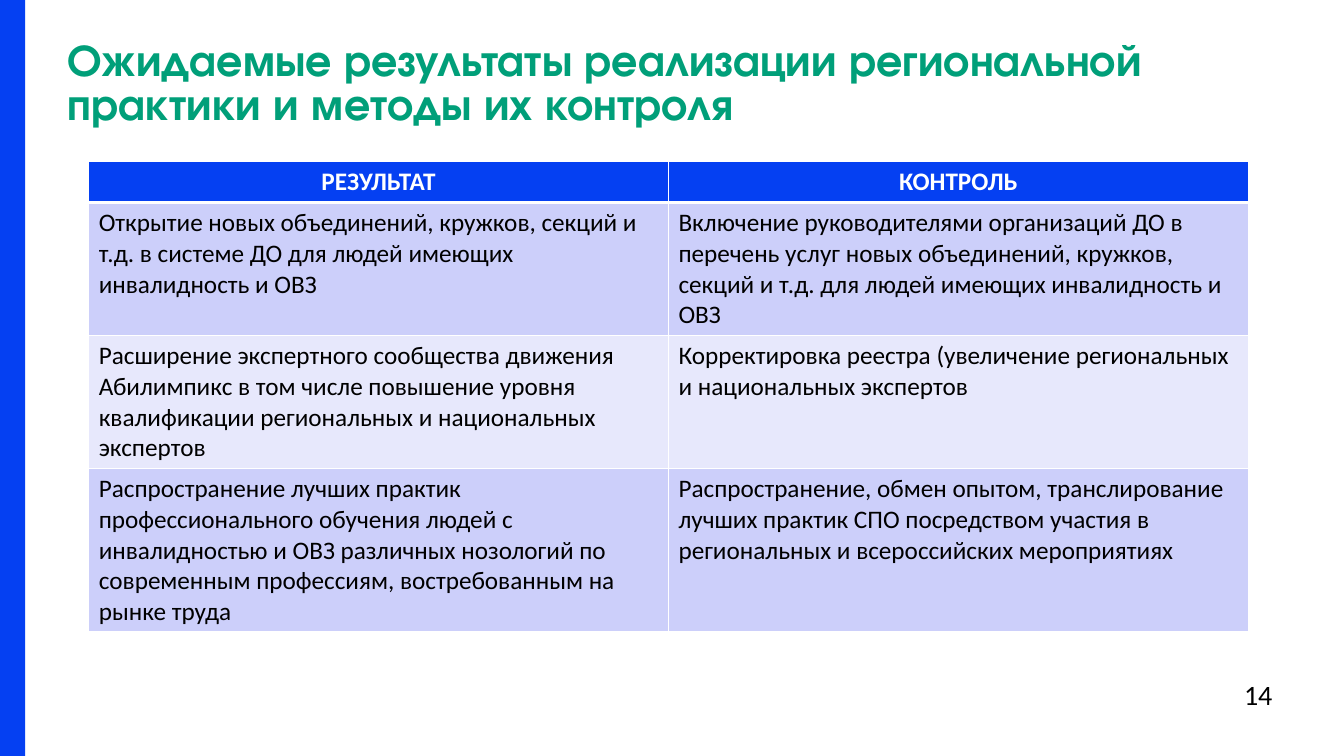
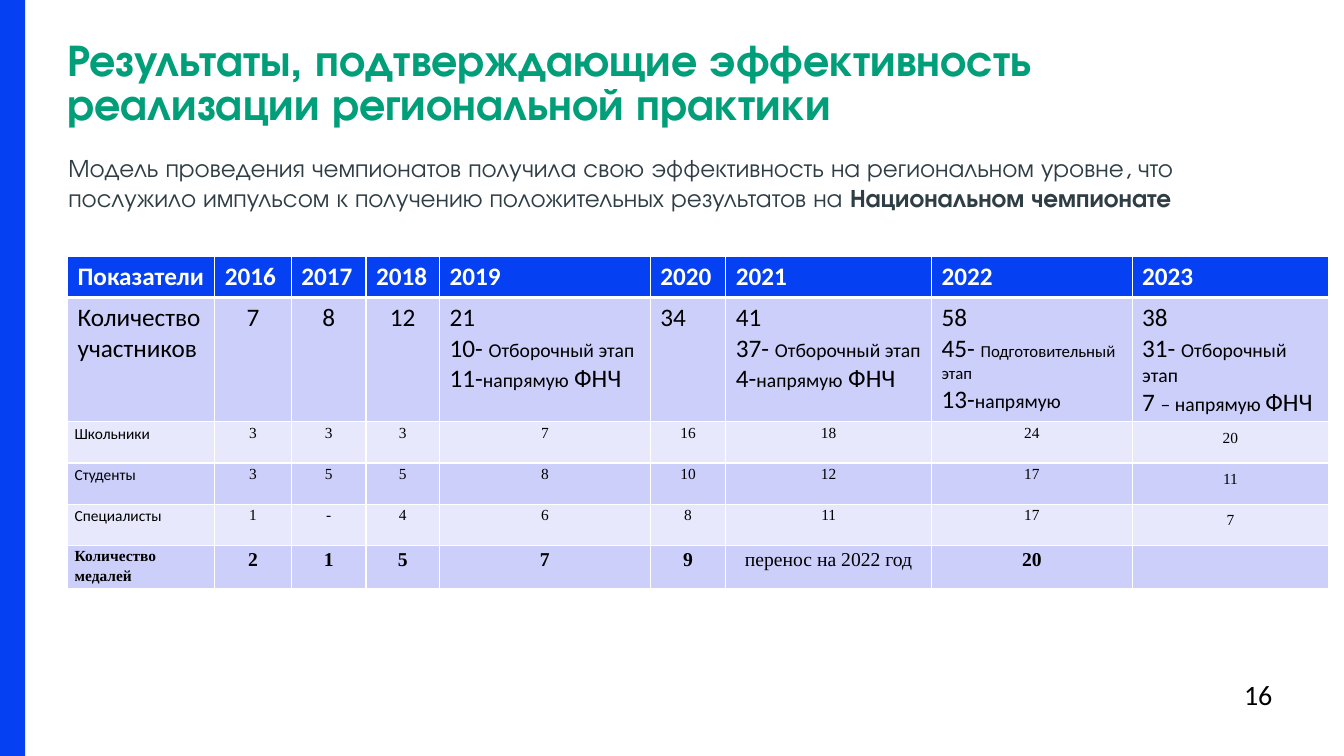
from lxml import etree
from pptx import Presentation
from pptx.dml.color import RGBColor
from pptx.enum.shapes import MSO_SHAPE
from pptx.enum.text import MSO_ANCHOR, MSO_AUTO_SIZE, PP_ALIGN
from pptx.oxml.ns import qn
from pptx.util import Inches, Pt

COLORS = {
    "blue": "0540F2",
    "green": "009F79",
    "slate": "2F3E45",
    "black": "000000",
    "white": "FFFFFF",
    "band": "CCCFFA",
    "light": "E7E8FC",
}
BODY, DISPLAY, SERIF = "Calibri", "TeX Gyre Adventor", "Times New Roman"
LEFT, CENTER = PP_ALIGN.LEFT, PP_ALIGN.CENTER
SLIDE_W, SLIDE_H = 13.33, 7.5
HEADER_H = 0.41


def rgb(name):
    return RGBColor.from_string(COLORS[name])


def write(tf, paragraphs, align=LEFT, spacing=None, **base):
    if isinstance(paragraphs, str):
        paragraphs = [paragraphs]
    for i, runs in enumerate(paragraphs):
        p = tf.paragraphs[0] if i == 0 else tf.add_paragraph()
        p.alignment = align
        if spacing:
            p.line_spacing = spacing
        for text, own in [(runs, {})] if isinstance(runs, str) else runs:
            fmt = {"size": 18, "font": BODY, "color": "black", "bold": False} | base | own
            r = p.add_run()
            r.text = text
            r.font.size = Pt(fmt["size"])
            r.font.name = fmt["font"]
            r.font.bold = fmt["bold"]
            r.font.color.rgb = rgb(fmt["color"])


def add_text(slide, box, paragraphs, wrap=True, **fmt):
    tf = slide.shapes.add_textbox(*map(Inches, box)).text_frame
    tf.word_wrap = wrap
    write(tf, paragraphs, **fmt)


def add_frame(prs, title, number):
    slide = prs.slides.add_slide(prs.slide_layouts[5])
    sp = slide.shapes.title
    sp.left, sp.top, sp.width, sp.height = map(Inches, (0.67, 0.4, 11.93, 0.98))
    tf = sp.text_frame
    tf.margin_left = tf.margin_top = tf.margin_right = tf.margin_bottom = 0
    tf.vertical_anchor = MSO_ANCHOR.TOP
    tf.auto_size = MSO_AUTO_SIZE.NONE
    tf.word_wrap = True
    write(tf, title, spacing=Pt(32), size=32, font=DISPLAY, color="green", bold=True)

    band = slide.shapes.add_shape(MSO_SHAPE.RECTANGLE, 0, 0, Inches(0.25), Inches(SLIDE_H))
    band.shadow.inherit = False
    band.fill.solid()
    band.fill.fore_color.rgb = rgb("blue")
    band.line.fill.background()
    add_text(slide, (12.24, 6.67, 0.53, 0.44), number, wrap=False, size=20)
    return slide


def paint_cell(cell, row):
    tc_pr = cell._tc.get_or_add_tcPr()
    widths = {"L": 1, "R": 1, "T": 3 if row == 1 else 1, "B": 3 if row == 0 else 1}
    for side, width in widths.items():
        ln = etree.SubElement(tc_pr, qn("a:ln" + side), w=str(Pt(width)))
        fill = etree.SubElement(ln, qn("a:solidFill"))
        etree.SubElement(fill, qn("a:srgbClr"), val=COLORS["white"])
    cell.fill.solid()
    cell.fill.fore_color.rgb = rgb("blue" if row == 0 else "band" if row % 2 else "light")


def add_grid(slide, left, top, cols, heights, headers, align):
    frame = slide.shapes.add_table(len(heights), len(cols), Inches(left), Inches(top),
                                   Inches(sum(cols)), Inches(sum(heights)))
    table = frame.table
    table.horz_banding = False
    for col, width in zip(table.columns, cols):
        col.width = Inches(width)
    for i, (row, height) in enumerate(zip(table.rows, heights)):
        row.height = Inches(height)
        for cell in row.cells:
            paint_cell(cell, i)
    for cell, text in zip(table.rows[0].cells, headers):
        write(cell.text_frame, text, align=align, color="white", bold=True)
    return table


def fill_compact(cell, text, **fmt):
    cell.margin_left = cell.margin_right = Inches(0.07)
    cell.margin_top = cell.margin_bottom = 0
    write(cell.text_frame, text, spacing=1.15, **fmt)


def build_expected(prs):
    slide = add_frame(
        prs, "Ожидаемые результаты реализации региональной практики и методы их контроля", "14")
    rows = [
        ("Открытие новых объединений, кружков, секций и т.д. в системе ДО для людей "
         "имеющих инвалидность и ОВЗ",
         "Включение руководителями организаций ДО в перечень услуг новых объединений, "
         "кружков, секций и т.д. для людей имеющих инвалидность и ОВЗ"),
        ("Расширение экспертного сообщества движения Абилимпикс в том числе повышение "
         "уровня квалификации региональных и национальных экспертов",
         "Корректировка реестра (увеличение региональных и национальных экспертов"),
        ("Распространение лучших практик профессионального обучения людей с инвалидностью "
         "и ОВЗ различных нозологий по современным профессиям, востребованным на рынке труда",
         "Распространение, обмен опытом, транслирование лучших практик СПО посредством "
         "участия в региональных и всероссийских мероприятиях"),
    ]
    table = add_grid(slide, 0.88, 1.6, [5.75, 5.75], [HEADER_H, 1.32, 1.32, 1.62],
                     ["РЕЗУЛЬТАТ", "КОНТРОЛЬ"], CENTER)
    for i, texts in enumerate(rows, 1):
        for cell, text in zip(table.rows[i].cells, texts):
            write(cell.text_frame, text)


def stage(count, label, size=14):
    return [(count, {}), (label, {"size": size})]


def build_evidence(prs):
    slide = add_frame(
        prs, "Результаты, подтверждающие эффективность реализации региональной практики", "16")
    intro = [
        ("Модель проведения чемпионатов получила свою эффективность на региональном уровне, "
         "что послужило импульсом к получению положительных результатов на ", {}),
        ("Национальном чемпионате", {"bold": True}),
    ]
    add_text(slide, (0.58, 1.46, 12.4, 0.71), [intro], font=DISPLAY, color="slate")

    cols = [1.46, 0.76, 0.74, 0.73, 2.09, 0.75, 2.04, 1.99, 1.95]
    headers = ["Показатели"] + [str(year) for year in range(2016, 2024)]
    table = add_grid(slide, 0.67, 2.54, cols, [HEADER_H, 1.23] + [HEADER_H] * 4,
                     headers, LEFT)

    final = ("ФНЧ", {})
    participants = [
        "Количество участников", "7", "8", "12",
        ["21", stage("10- ", "Отборочный этап"),
         stage("11-", "напрямую") + [(" ", {"size": 16}), final]],
        "34",
        ["41", stage("37- ", "Отборочный этап"), stage("4-", "напрямую") + [(" ФНЧ", {})]],
        ["58", stage("45- ", "Подготовительный этап", 12), stage("13-", "напрямую")],
        ["38", stage("31- ", "Отборочный этап"), stage("7 ", "– напрямую ") + [final]],
    ]
    for j, (cell, text) in enumerate(zip(table.rows[1].cells, participants)):
        write(cell.text_frame, text, align=CENTER if 1 <= j <= 3 else LEFT)

    groups = [
        ("Школьники", "3 3 3 7 16 18 24 20"),
        ("Студенты", "3 5 5 8 10 12 17 11"),
        ("Специалисты", "1 - 4 6 8 11 17 7"),
    ]
    for i, (label, counts) in enumerate(groups, 2):
        first, *middle, last = table.rows[i].cells
        *values, latest = counts.split()
        fill_compact(first, label, size=11)
        for cell, value in zip(middle, values):
            fill_compact(cell, value, align=CENTER, size=11, font=SERIF)
        write(last.text_frame, latest, align=CENTER, spacing=1.15, size=11, font=SERIF)

    first, *others = table.rows[5].cells
    fill_compact(first, "Количество медалей", size=11, font=SERIF, bold=True)
    medals = ["2", "1", "5", "7", "9", "перенос на 2022 год", "20"]
    for cell, value in zip(others, medals):
        fill_compact(cell, value, align=CENTER, size=14, font=SERIF, bold=value.isdigit())


def main():
    prs = Presentation()
    prs.slide_width, prs.slide_height = Inches(SLIDE_W), Inches(SLIDE_H)
    build_expected(prs)
    build_evidence(prs)
    prs.save("out.pptx")


if __name__ == "__main__":
    main()
